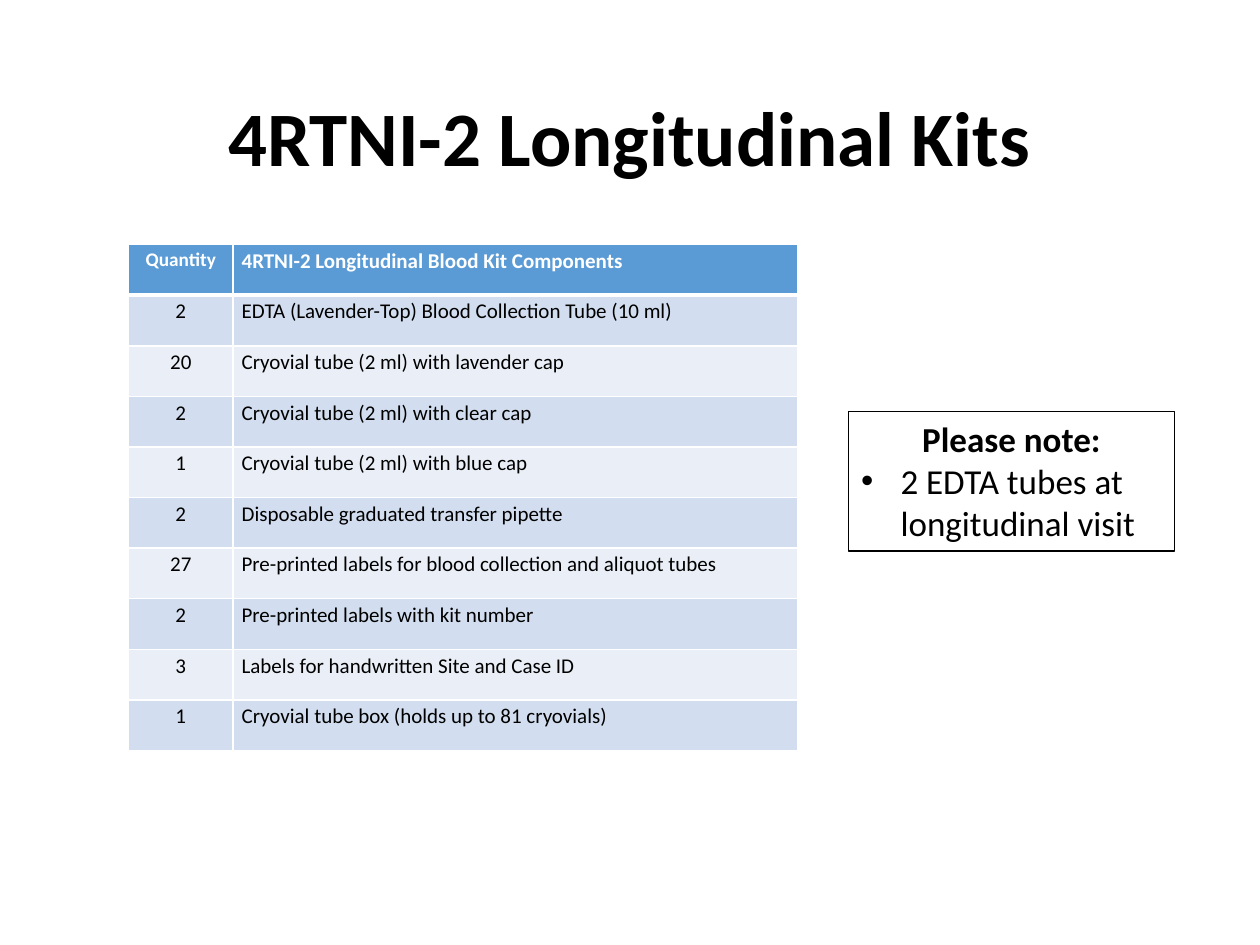
"""Build the 4RTNI-2 longitudinal kit contents slide."""
import pptx
import pptx.dml.color
import pptx.enum.text
import pptx.oxml
import pptx.oxml.ns
import pptx.util

Pt = pptx.util.Pt
ALIGN = pptx.enum.text.PP_ALIGN
ANCHOR = pptx.enum.text.MSO_ANCHOR

TITLE = "4RTNI-2 Longitudinal Kits"
HEADINGS = ("Quantity", "4RTNI-2 Longitudinal Blood Kit Components")
COMPONENTS = [
    ("2", "EDTA (Lavender-Top) Blood Collection Tube (10 ml)"),
    ("20", "Cryovial tube (2 ml) with lavender cap"),
    ("2", "Cryovial tube (2 ml) with clear cap"),
    ("1", "Cryovial tube (2 ml) with blue cap"),
    ("2", "Disposable graduated transfer pipette"),
    ("27", "Pre-printed labels for blood collection and aliquot tubes"),
    ("2", "Pre-printed labels with kit number"),
    ("3", "Labels for handwritten Site and Case ID"),
    ("1", "Cryovial tube box (holds up to 81 cryovials)"),
]
NOTE_HEADING = "Please note:"
NOTE_ITEMS = ["2 EDTA tubes at longitudinal visit"]

THEME = {
    "font": "Calibri",
    "text": "000000", "light": "FFFFFF", "header": "5B9BD5",
    "bands": ("D2DEEF", "EAEFF7"),
    "title_size": 44, "table_size": 12, "quantity_heading_size": 11, "note_size": 20,
}
TITLE_BOX = (49.5, 28.75, 621, 104.4)
TABLE_ORIGIN = (73.5, 139.75)
COLUMN_WIDTHS = (59.6, 322.6)
ROW_HEIGHT = 28.94
NOTE_BOX = (485, 235, 186, 80)
NOTE_INDENT = 22.5


def points(values):
    return [Pt(value) for value in values]


def rgb(colour):
    return pptx.dml.color.RGBColor.from_string(colour)


def write(paragraph, text, size, colour=THEME["text"], bold=False, align=ALIGN.LEFT, spacing=None):
    paragraph.alignment = align
    if spacing:
        paragraph.line_spacing = spacing
    run = paragraph.add_run()
    run.text = text
    run.font.name = THEME["font"]
    run.font.size = Pt(size)
    run.font.bold = bold
    run.font.color.rgb = rgb(colour)


def set_borders(cell, widths):
    properties = cell._tc.get_or_add_tcPr()
    for position, (side, width) in enumerate(widths.items()):
        properties.insert(position, pptx.oxml.parse_xml(
            f'<a:ln{side} {pptx.oxml.ns.nsdecls("a")} w="{Pt(width)}"><a:solidFill>'
            f'<a:srgbClr val="{THEME["light"]}"/></a:solidFill></a:ln{side}>'))


def add_title(slide):
    title = slide.shapes.title
    title.left, title.top, title.width, title.height = points(TITLE_BOX)
    title.text_frame.vertical_anchor = ANCHOR.MIDDLE
    write(title.text_frame.paragraphs[0], TITLE, THEME["title_size"],
          bold=True, align=ALIGN.CENTER, spacing=0.9)


def add_kit_table(slide):
    rows = [HEADINGS, *COMPONENTS]
    extent = (sum(COLUMN_WIDTHS), ROW_HEIGHT * len(rows))
    kit = slide.shapes.add_table(
        len(rows), len(HEADINGS), *points(TABLE_ORIGIN + extent)).table
    for column, width in zip(kit.columns, COLUMN_WIDTHS):
        column.width = Pt(width)
    for r, row in enumerate(rows):
        kit.rows[r].height = Pt(ROW_HEIGHT)
        heading = r == 0
        fill = THEME["header"] if heading else THEME["bands"][(r - 1) % 2]
        for c, text in enumerate(row):
            cell = kit.cell(r, c)
            cell.margin_left = cell.margin_right = Pt(5)
            cell.margin_top = cell.margin_bottom = 0
            cell.fill.solid()
            cell.fill.fore_color.rgb = rgb(fill)
            set_borders(cell, {"L": 1, "R": 1, "T": 3 if r == 1 else 1, "B": 3 if heading else 1})
            size = THEME["quantity_heading_size" if heading and c == 0 else "table_size"]
            write(cell.text_frame.paragraphs[0], text, size,
                  THEME["light" if heading else "text"], heading,
                  ALIGN.CENTER if c == 0 else ALIGN.LEFT, 1.15)


def add_note(slide):
    note = slide.shapes.add_textbox(*points(NOTE_BOX))
    note.line.color.rgb = rgb(THEME["text"])
    note.line.width = Pt(0.75)
    frame = note.text_frame
    frame.word_wrap = True
    frame.auto_size = pptx.enum.text.MSO_AUTO_SIZE.SHAPE_TO_FIT_TEXT
    write(frame.paragraphs[0], NOTE_HEADING, THEME["note_size"], bold=True, align=ALIGN.CENTER)
    for item in NOTE_ITEMS:
        paragraph = frame.add_paragraph()
        properties = paragraph._p.get_or_add_pPr()
        properties.set("marL", str(Pt(NOTE_INDENT)))
        properties.set("indent", str(-Pt(NOTE_INDENT)))
        for bullet in ('buFont {} typeface="Arial"', 'buChar {} char="•"'):
            properties.append(pptx.oxml.parse_xml(
                f'<a:{bullet.format(pptx.oxml.ns.nsdecls("a"))}/>'))
        write(paragraph, item, THEME["note_size"])


def main():
    deck = pptx.Presentation()
    deck.slide_width, deck.slide_height = Pt(720), Pt(540)
    slide = deck.slides.add_slide(deck.slide_layouts[5])
    add_title(slide)
    add_kit_table(slide)
    add_note(slide)
    deck.save("out.pptx")


if __name__ == "__main__":
    main()
